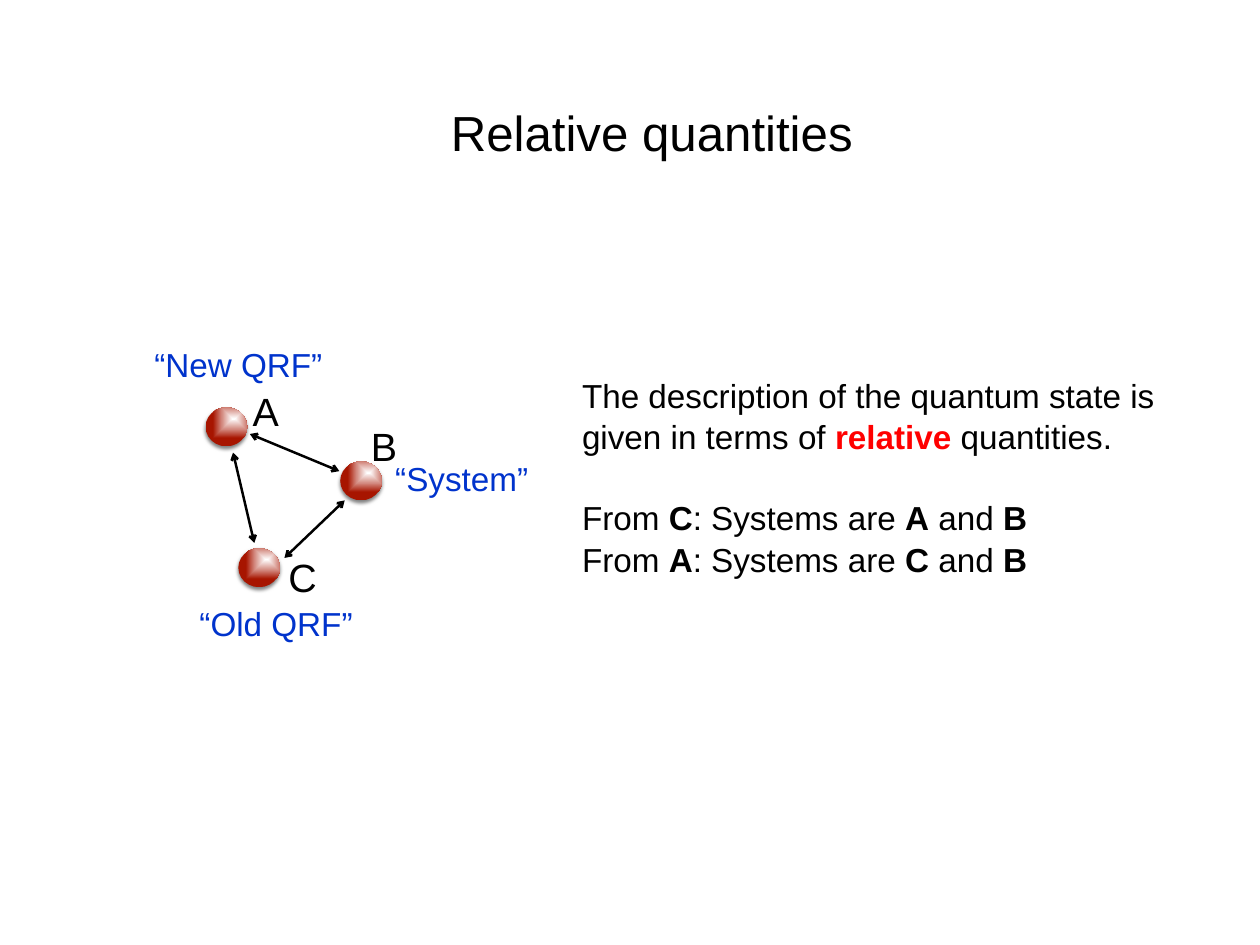
from dataclasses import dataclass

from lxml import etree
from pptx import Presentation, oxml
from pptx import util as u
from pptx.dml.color import RGBColor
from pptx.enum import shapes, text
from pptx.oxml import ns

PX = 9144  # 100 px to the inch


@dataclass(frozen=True)
class Theme:
    font: str = "Arial"
    ink: str = "000000"
    label: str = "0033CC"
    accent: str = "FF0000"
    ball_stops: tuple = ((0, "FFFFFF"), (54, "D38A80"), (100, "A71500"))
    title_size: int = 40
    letter_size: int = 32
    body_size: int = 27
    body_spacing: float = 1.04
    arrow_width: int = 2


THEME = Theme()


def px(*lengths):
    return [u.Emu(length * PX) for length in lengths]


def add_run(paragraph, wording, size, color=THEME.ink, bold=False):
    run = paragraph.add_run()
    run.text = wording
    run.font.name = THEME.font
    run.font.size = u.Pt(size)
    run.font.bold = bold
    run.font.color.rgb = RGBColor.from_string(color)


def add_text_frame(slide, box, margins, wrap=False):
    frame = slide.shapes.add_textbox(*px(*box)).text_frame
    frame.word_wrap = wrap
    horizontal, vertical = px(*margins)
    frame.margin_left = frame.margin_right = horizontal
    frame.margin_top = frame.margin_bottom = vertical
    return frame


def add_centred_text(slide, box, wording, size, color=THEME.ink, margins=(10, 5)):
    frame = add_text_frame(slide, box, margins)
    paragraph = frame.paragraphs[0]
    paragraph.alignment = text.PP_ALIGN.CENTER
    add_run(paragraph, wording, size, color)
    return frame


def add_ball(slide, box):
    """Draw a glossy red sphere with a soft shadow below it."""
    ball = slide.shapes.add_shape(shapes.MSO_SHAPE.OVAL, *px(*box))
    ball.line.fill.background()
    ball.shadow.inherit = False
    ball.fill.gradient()
    properties = ball.element.spPr
    stops = "".join(
        f'<a:gs pos="{position * 1000}"><a:srgbClr val="{color}"/></a:gs>'
        for position, color in THEME.ball_stops
    )
    gradient = oxml.parse_xml(
        f'<a:gradFill {ns.nsdecls("a")} rotWithShape="1"><a:gsLst>{stops}</a:gsLst>'
        '<a:path path="shape"><a:fillToRect l="68000" t="29000" r="32000" b="71000"/>'
        "</a:path></a:gradFill>"
    )
    properties.replace(properties.find(ns.qn("a:gradFill")), gradient)
    shadow = oxml.parse_xml(
        f'<a:outerShdw {ns.nsdecls("a")} blurRad="{u.Pt(3)}" dist="{u.Pt(2)}" '
        'dir="5400000" rotWithShape="0"><a:srgbClr val="000000">'
        '<a:alpha val="50000"/></a:srgbClr></a:outerShdw>'
    )
    properties.find(ns.qn("a:effectLst")).append(shadow)


def add_double_arrow(slide, start, end):
    arrow = slide.shapes.add_connector(
        shapes.MSO_CONNECTOR.STRAIGHT, *px(*start, *end)
    )
    arrow.line.width = u.Pt(THEME.arrow_width)
    arrow.line.color.rgb = RGBColor.from_string(THEME.ink)
    line = arrow.line._get_or_add_ln()
    for tag in ("a:headEnd", "a:tailEnd"):
        etree.SubElement(line, ns.qn(tag), type="arrow")
    etree.SubElement(arrow.element.spPr, ns.qn("a:effectLst"))


def add_title(slide, box):
    add_centred_text(
        slide, box, "Relative quantities", THEME.title_size, margins=(14, 7)
    )


def add_frames_diagram(slide, left, top):
    """Draw the three systems, the arrows between them and their roles."""

    def place(x, y, *size):
        return (left + x, top + y, *size)

    for x, y in ((69, 76), (221, 137), (106, 235)):
        add_ball(slide, place(x, y, 47, 44))

    for start, end in (
        ((124, 229), (100, 127)),
        ((220, 148), (119, 106)),
        ((226, 181), (158, 246)),
    ):
        add_double_arrow(slide, place(*start), place(*end))

    for letter, box in (
        ("A", (112, 52, 50, 55)),
        ("B", (247, 95, 47, 49)),
        ("C", (155, 240, 47, 55)),
    ):
        frame = add_centred_text(
            slide, place(*box), letter, THEME.letter_size, margins=(6, 6)
        )
        frame.vertical_anchor = text.MSO_ANCHOR.MIDDLE

    for role, x, y, width in (
        ("“System”", 272, 129, 172),
        ("“Old QRF”", 51, 292, 195),
        ("“New QRF”", 0, 0, 212),
    ):
        add_centred_text(
            slide, place(x, y, width, 56), role, THEME.body_size, THEME.label
        )


def add_explanation(slide, box):
    frame = add_text_frame(slide, box, (10, 5), wrap=True)
    statement = frame.paragraphs[0]
    statement.line_spacing = THEME.body_spacing
    add_run(
        statement,
        "The description of the quantum state is given in terms of ",
        THEME.body_size,
    )
    add_run(statement, "relative", THEME.body_size, THEME.accent, bold=True)
    add_run(statement, " quantities.", THEME.body_size)

    for observer, first, second, gap in (("C", "A", "B", 32), ("A", "C", "B", 0)):
        paragraph = frame.add_paragraph()
        paragraph.line_spacing = THEME.body_spacing
        paragraph.space_before = u.Pt(gap)
        for plain, bold in (
            ("From ", observer),
            (": Systems are ", first),
            (" and ", second),
        ):
            add_run(paragraph, plain, THEME.body_size)
            add_run(paragraph, bold, THEME.body_size, bold=True)


def main():
    presentation = Presentation()
    presentation.slide_width, presentation.slide_height = px(1422, 1067)
    slide = presentation.slides.add_slide(presentation.slide_layouts[6])
    add_title(slide, (492, 109, 487, 82))
    add_frames_diagram(slide, 163, 384)
    add_explanation(slide, (647, 417, 752, 237))
    presentation.save("out.pptx")


if __name__ == "__main__":
    main()
